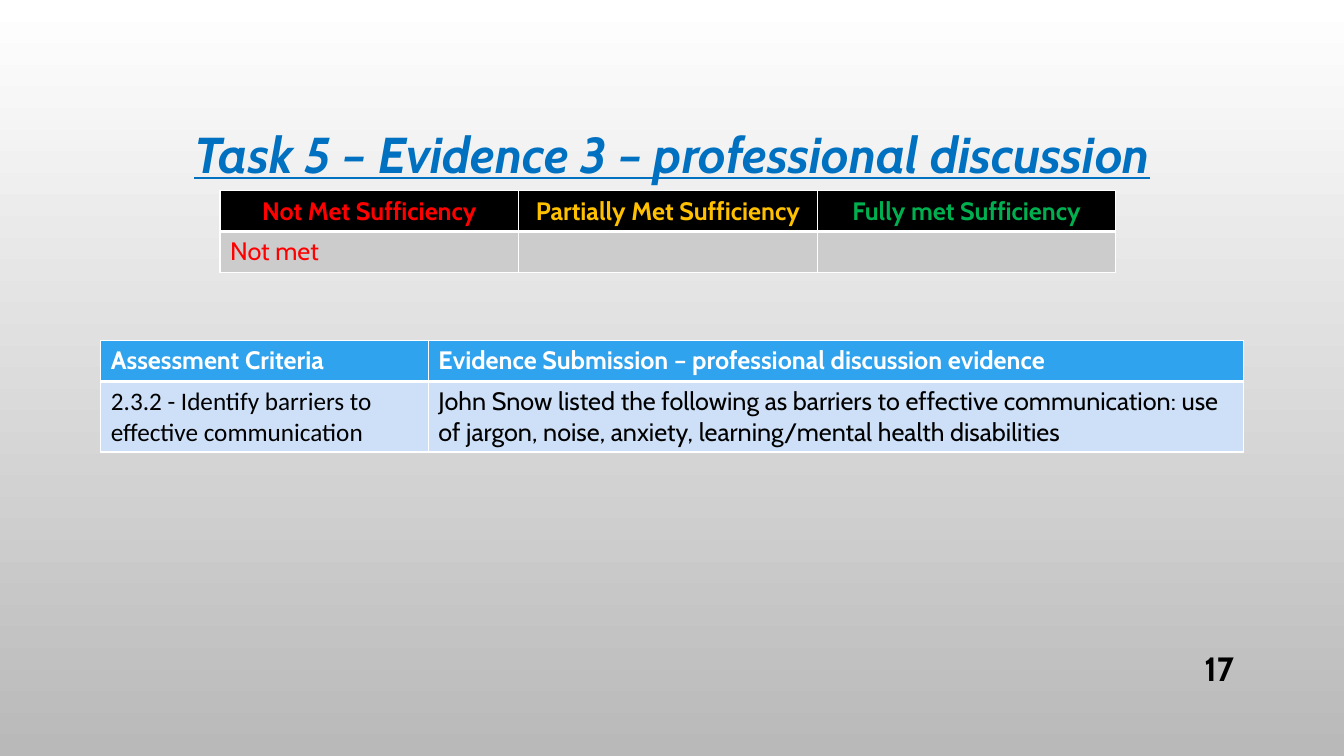
import pptx
import pptx.dml.color
import pptx.enum.text
import pptx.oxml
import pptx.oxml.ns
import pptx.util

Pt = pptx.util.Pt
ALIGN = pptx.enum.text.PP_ALIGN
MIDDLE = pptx.enum.text.MSO_ANCHOR.MIDDLE


def colour(hex_string):
    return pptx.dml.color.RGBColor.from_string(hex_string)


def write(frame, text, size=18, font="Cabin", color="000000", bold=False,
          italic=False, underline=False, align=ALIGN.LEFT, spacing=None):
    """Put one formatted paragraph into a text frame."""
    paragraph = frame.paragraphs[0]
    paragraph.alignment = align
    paragraph.line_spacing = spacing
    run = paragraph.add_run()
    run.text = text
    run.font.size = Pt(size)
    run.font.name = font
    run.font.color.rgb = colour(color)
    run.font.bold = bold
    run.font.italic = italic
    run.font.underline = underline


class EvidenceSlide:
    border_color = "FFFFFF"
    thin, thick = 1, 3

    def __init__(self, deck):
        self.slide = deck.slides.add_slide(deck.slide_layouts[5])

    def background(self, top, bottom):
        fill = self.slide.background.fill
        fill.gradient()
        fill.gradient_angle = 270
        for stop, shade, position in zip(fill.gradient_stops, (top, bottom), (0, 1)):
            stop.color.rgb = colour(shade)
            stop.position = position

    def title(self, text, left, top, width, height, **style):
        heading = self.slide.shapes.title
        heading.left, heading.top = Pt(left), Pt(top)
        heading.width, heading.height = Pt(width), Pt(height)
        heading.text_frame.word_wrap = True
        heading.text_frame.vertical_anchor = MIDDLE
        write(heading.text_frame, text, **style)

    def label(self, text, left, top, width, height, **style):
        frame = self.slide.shapes.add_textbox(
            Pt(left), Pt(top), Pt(width), Pt(height)).text_frame
        frame.word_wrap = True
        frame.vertical_anchor = MIDDLE
        write(frame, text, **style)

    def borders(self, cell, **widths):
        properties = cell._tc.get_or_add_tcPr()
        for index, side in enumerate("LRTB"):
            line = pptx.oxml.parse_xml(
                f'<a:ln{side} {pptx.oxml.ns.nsdecls("a")} w="{Pt(widths.get(side, self.thin))}">'
                f'<a:solidFill><a:srgbClr val="{self.border_color}"/></a:solidFill>'
                f'</a:ln{side}>')
            properties.insert(index, line)

    def table(self, rows, left, top, columns, heights, fills):
        """Rows hold (text, style) cells; the first row is the header."""
        grid = self.slide.shapes.add_table(
            len(rows), len(columns), Pt(left), Pt(top),
            Pt(sum(columns)), Pt(sum(heights))).table
        grid.horz_banding = False
        for column, width in zip(grid.columns, columns):
            column.width = Pt(width)
        for r, row in enumerate(rows):
            grid.rows[r].height = Pt(heights[r])
            header = r == 0
            for c, (text, style) in enumerate(row):
                cell = grid.cell(r, c)
                cell.fill.solid()
                cell.fill.fore_color.rgb = colour(fills[r])
                # The line under the header is the thick one
                self.borders(cell, **{"B" if header else "T": self.thick})
                if text:
                    write(cell.text_frame, text, bold=header, **style)


def main():
    deck = pptx.Presentation()
    deck.slide_width, deck.slide_height = Pt(960), Pt(540)
    page = EvidenceSlide(deck)
    page.background("FFFFFF", "B9B9B9")

    # Heading and page number
    page.title("Task 5 – Evidence 3 – professional discussion", 72, 49, 816, 126,
               size=36, color="0070C0", bold=True, italic=True, underline=True,
               align=ALIGN.CENTER, spacing=0.9)
    page.label("17", 828, 463, 60.5, 28.8, size=24, bold=True, align=ALIGN.RIGHT)

    # Sufficiency rating
    ratings = [("Not Met Sufficiency", "FF0000"),
               ("Partially Met Sufficiency", "FFC000"),
               ("Fully met Sufficiency", "00B050")]
    rating_header = [(text, {"color": shade, "align": ALIGN.CENTER})
                     for text, shade in ratings]
    rating_result = [("Not met", {"color": "FF0000"}), ("", {}), ("", {})]
    page.table([rating_header, rating_result], 157.2, 136.2,
               [213.3] * 3, [29.2] * 2, ["000000", "CCCCCC"])

    # Criteria and evidence
    white = {"color": "FFFFFF"}
    criteria_header = [
        ("Assessment Criteria", white),
        ("Evidence Submission – professional discussion evidence", white)]
    criterion = [
        ("2.3.2 - Identify barriers to effective communication", {"font": "Calibri"}),
        ("John Snow listed the following as barriers to effective communication: "
         "use of jargon, noise, anxiety, learning/mental health disabilities", {})]
    page.table([criteria_header, criterion], 72, 243.2,
               [234, 582], [29.2, 50.4], ["2FA3EE", "CDE0F8"])

    deck.save("out.pptx")


if __name__ == "__main__":
    main()
